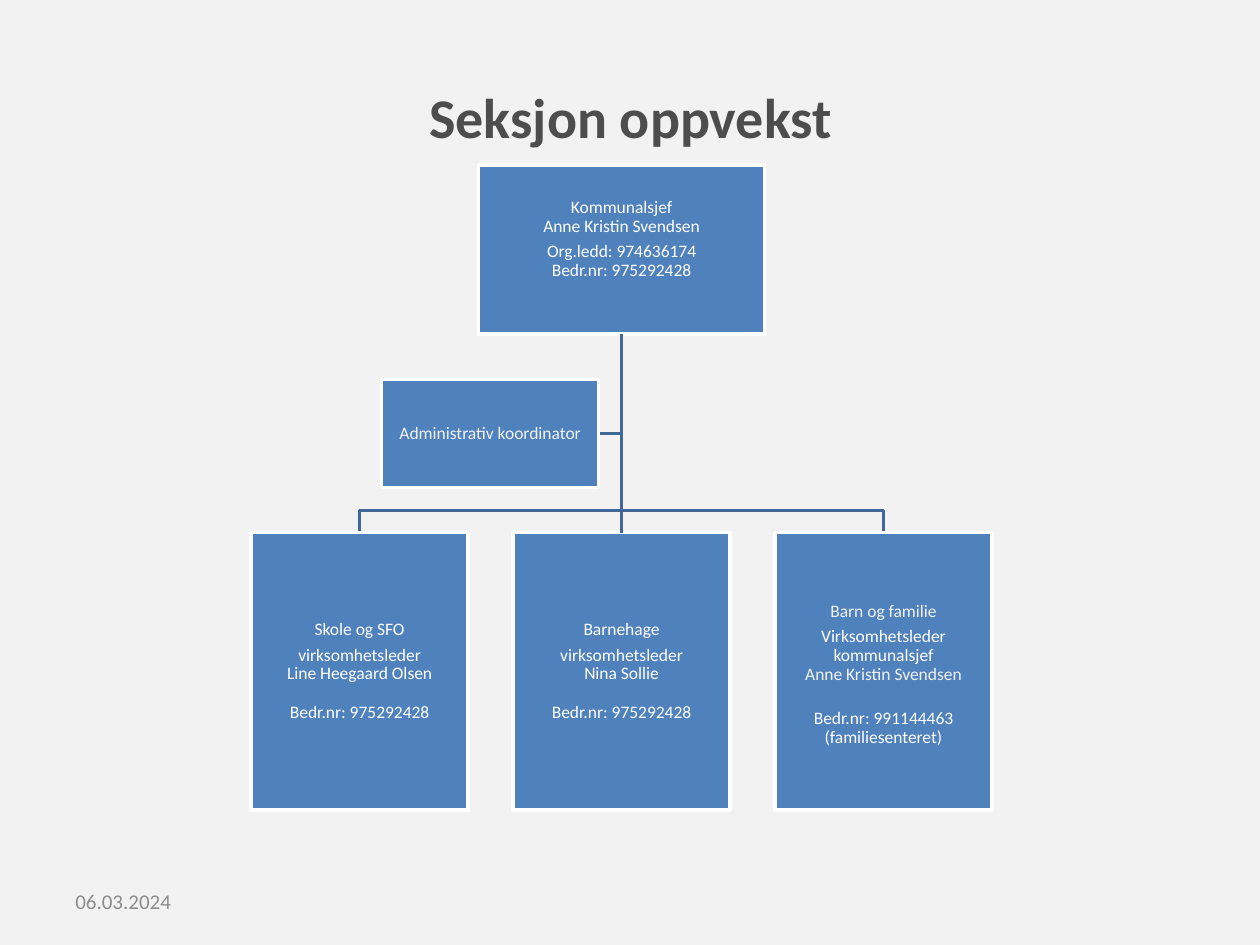
"""Build the organisation chart slide for Seksjon oppvekst."""
from dataclasses import dataclass

import pptx
import pptx.dml.color
import pptx.enum.shapes
import pptx.enum.text
import pptx.oxml.ns
import pptx.util
from lxml import etree
from pptx.util import Cm, Pt

RGBColor = pptx.dml.color.RGBColor
BACKGROUND = RGBColor(0xF2, 0xF2, 0xF2)
WHITE = RGBColor(0xFF, 0xFF, 0xFF)
BLUE = RGBColor(0x4F, 0x81, 0xBD)
LINE_BLUE = RGBColor(0x3F, 0x67, 0x97)
TITLE_GREY = RGBColor(0x4D, 0x4D, 0x4D)
DATE_GREY = RGBColor(0x8C, 0x8C, 0x8C)
FONT = "Calibri"

AXIS = 12.53
CHIEF_BOTTOM = 6.73
BRANCH_Y = 10.29
UNIT_TOP = 10.74
UNIT_WIDTH = 4.37
UNIT_PITCH = 5.28


@dataclass(frozen=True)
class Line:
    text: str
    space_before: float = 0
    color: RGBColor = WHITE


@dataclass(frozen=True)
class Position:
    center: float
    top: float
    width: float
    height: float
    lines: tuple[Line, ...]
    inset_top: float = 0.02
    inset_bottom: float = 0.02


def unit(column: int, *lines: Line, inset_top: float = 0.02) -> Position:
    """Return a unit in the bottom row, counted from the central axis."""
    return Position(AXIS + column * UNIT_PITCH, UNIT_TOP, UNIT_WIDTH, 5.59, lines, inset_top)


CHIEF = Position(AXIS, 3.33, 5.77, 3.4, (
    Line("Kommunalsjef"),
    Line("Anne Kristin Svendsen"),
    Line("Org.ledd: 974636174", 3.5),
    Line("Bedr.nr: 975292428"),
), inset_bottom=0.44)
COORDINATOR = Position(9.88, 7.65, UNIT_WIDTH, 2.18, (
    Line("Administrativ koordinator", color=BACKGROUND),
))
SCHOOL = unit(
    -1,
    Line("Skole og SFO"),
    Line("virksomhetsleder", 3.5),
    Line("Line Heegaard Olsen"),
    Line("Bedr.nr: 975292428", 11),
)
KINDERGARTEN = unit(
    0,
    Line("Barnehage"),
    Line("virksomhetsleder", 3.5),
    Line("Nina Sollie"),
    Line("Bedr.nr: 975292428", 11),
)
FAMILY = unit(
    1,
    Line("Barn og familie", color=BACKGROUND),
    Line("Virksomhetsleder kommunalsjef", 3.5),
    Line("Anne Kristin Svendsen", color=BACKGROUND),
    Line("Bedr.nr: 991144463 (familiesenteret)", 14.5),
    inset_top=0.16,
)


def style_font(font: pptx.text.text.Font, size: float, color: RGBColor, bold: bool = False) -> None:
    """Apply the slide's typeface with a size, colour and weight."""
    font.name = FONT
    font.size = Pt(size)
    font.bold = bold
    font.color.rgb = color


def draw_position(slide: pptx.slide.Slide, position: Position) -> pptx.shapes.autoshape.Shape:
    """Draw one box of the chart with its text."""
    box = slide.shapes.add_shape(
        pptx.enum.shapes.MSO_SHAPE.RECTANGLE,
        Cm(position.center - position.width / 2), Cm(position.top),
        Cm(position.width), Cm(position.height),
    )
    box.shadow.inherit = False
    box.fill.solid()
    box.fill.fore_color.rgb = BLUE
    box.line.color.rgb = WHITE
    box.line.width = Pt(2)
    frame = box.text_frame
    frame.word_wrap = True
    frame.vertical_anchor = pptx.enum.text.MSO_ANCHOR.MIDDLE
    frame.margin_left = frame.margin_right = Cm(0.02)
    frame.margin_top = Cm(position.inset_top)
    frame.margin_bottom = Cm(position.inset_bottom)
    frame.text = "\n".join(line.text for line in position.lines)
    for paragraph, line in zip(frame.paragraphs, position.lines):
        paragraph.alignment = pptx.enum.text.PP_ALIGN.CENTER
        paragraph.line_spacing = 0.9
        paragraph.space_before = Pt(line.space_before)
        style_font(paragraph.runs[0].font, 10, line.color)
    return box


def draw_branch(slide: pptx.slide.Slide, points: list[tuple[float, float]]) -> None:
    """Draw an angled branch from the chief through the given points."""
    builder = slide.shapes.build_freeform(Cm(AXIS), Cm(CHIEF_BOTTOM))
    builder.add_line_segments([(Cm(x), Cm(y)) for x, y in points], close=False)
    branch = builder.convert_to_shape()
    branch.shadow.inherit = False
    branch.fill.background()
    branch.line.color.rgb = LINE_BLUE
    branch.line.width = Pt(2)


def draw_trunk(
    slide: pptx.slide.Slide,
    chief: pptx.shapes.autoshape.Shape,
    kindergarten: pptx.shapes.autoshape.Shape,
) -> None:
    """Join the chief to the unit straight below."""
    trunk = slide.shapes.add_connector(pptx.enum.shapes.MSO_CONNECTOR.STRAIGHT, 0, 0, 0, 0)
    trunk.begin_connect(chief, 2)
    trunk.end_connect(kindergarten, 0)
    trunk.line.color.rgb = LINE_BLUE
    trunk.line.width = Pt(2)
    etree.SubElement(trunk._element.spPr, pptx.oxml.ns.qn("a:effectLst"))


def main() -> None:
    """Build and save the slide."""
    presentation = pptx.Presentation()
    presentation.slide_width = Cm(25.4)
    presentation.slide_height = Cm(19.05)
    slide = presentation.slides.add_slide(presentation.slide_layouts[5])
    slide.background.fill.solid()
    slide.background.fill.fore_color.rgb = BACKGROUND

    title = slide.shapes.title
    title.left, title.top, title.width, title.height = Cm(1.3), Cm(0.76), Cm(22.83), Cm(3.18)
    title.text_frame.text = "Seksjon oppvekst"
    title.text_frame.vertical_anchor = pptx.enum.text.MSO_ANCHOR.MIDDLE
    title.text_frame.paragraphs[0].alignment = pptx.enum.text.PP_ALIGN.CENTER
    style_font(title.text_frame.paragraphs[0].runs[0].font, 32, TITLE_GREY, bold=True)

    coordinator_y = COORDINATOR.top + COORDINATOR.height / 2
    coordinator_right = COORDINATOR.center + COORDINATOR.width / 2
    draw_branch(slide, [(AXIS, coordinator_y), (coordinator_right, coordinator_y)])
    for side in (FAMILY, SCHOOL):
        draw_branch(slide, [(AXIS, BRANCH_Y), (side.center, BRANCH_Y), (side.center, UNIT_TOP)])

    chief = draw_position(slide, CHIEF)
    kindergarten = draw_position(slide, KINDERGARTEN)
    draw_trunk(slide, chief, kindergarten)
    for position in (SCHOOL, FAMILY, COORDINATOR):
        draw_position(slide, position)

    date = slide.shapes.add_textbox(Cm(1.27), Cm(17.65), Cm(5.92), Cm(1.02))
    date.text_frame.word_wrap = True
    date.text_frame.vertical_anchor = pptx.enum.text.MSO_ANCHOR.MIDDLE
    date.text_frame.text = "06.03.2024"
    style_font(date.text_frame.paragraphs[0].runs[0].font, 12, DATE_GREY)

    presentation.save("out.pptx")


if __name__ == "__main__":
    main()
